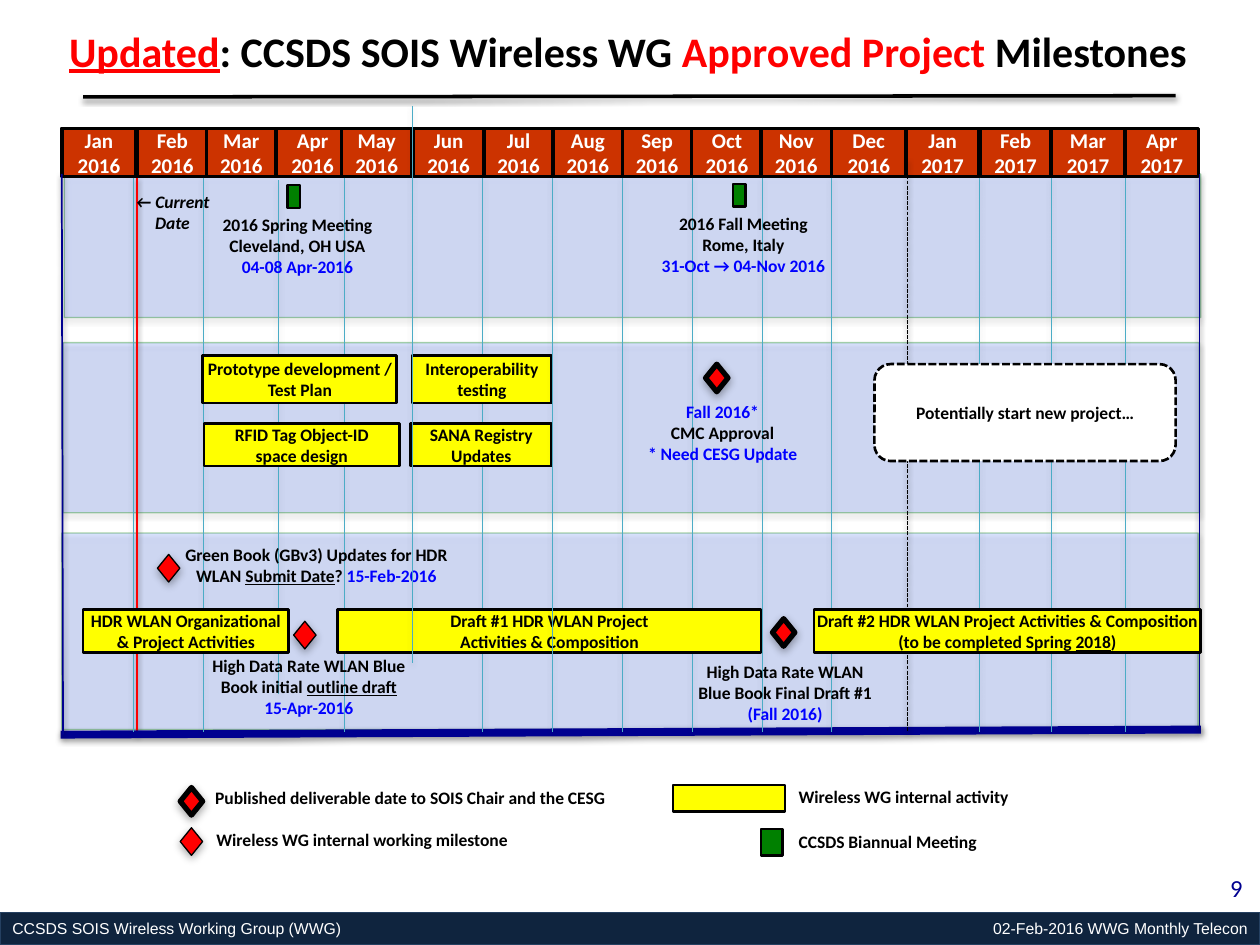
"""Build the wireless project milestone timeline slide."""
from dataclasses import dataclass
from typing import NamedTuple, Optional

from lxml import etree
from pptx import Presentation
from pptx import util as u
from pptx.dml.color import RGBColor
from pptx.enum import dml, shapes, text
from pptx.oxml.ns import qn

RECT = shapes.MSO_SHAPE.RECTANGLE
DIAMOND = shapes.MSO_SHAPE.DIAMOND
ROUND = shapes.MSO_SHAPE.ROUNDED_RECTANGLE
L, C, R = text.PP_ALIGN.LEFT, text.PP_ALIGN.CENTER, text.PP_ALIGN.RIGHT
DOT, DASH = dml.MSO_LINE.ROUND_DOT, dml.MSO_LINE.SQUARE_DOT


@dataclass(frozen=True)
class Theme:
    black: str = "000000"
    white: str = "FFFFFF"
    red: str = "FF0000"
    blue: str = "0000FF"
    navy: str = "000090"
    teal: str = "4BACC6"
    band: str = "3366FF"
    green: str = "008000"
    yellow: str = "FFFF00"
    month: str = "CC3300"
    footer: str = "0F243E"
    footer_edge: str = "254061"
    font: str = "Calibri"
    footer_font: str = "Arial"
    title: float = 24
    number: float = 14
    head: float = 12
    body: float = 10
    small: float = 9


T = Theme()


class Run(NamedTuple):
    text: str
    color: str = T.black
    underline: bool = False
    italic: bool = False
    bold: bool = True
    size: float = T.body
    font: str = T.font


class Shadow(NamedTuple):
    alpha: int
    blur: float
    dist: float


class Box(NamedTuple):
    x: float
    y: float
    w: float
    h: float


class Line(NamedTuple):
    x1: float
    y1: float
    x2: float
    y2: float
    color: str
    width: float
    dash: Optional[dml.MSO_LINE] = None


class Label(NamedTuple):
    box: Box
    paras: list
    align: text.PP_ALIGN = C
    wrap: bool = True


class Activity(NamedTuple):
    box: Box
    paras: list


BAND_SHADOW, LINE_SHADOW, GEM_SHADOW = Shadow(35, 3.1, 1.8), Shadow(38, 3.1, 1.6), Shadow(35, 5, 1.8)


def add_shadow(sp, shadow: Shadow) -> None:
    """Give a shape or connector a soft shadow straight below it."""
    spPr = sp._element.spPr
    effects = spPr.find(qn("a:effectLst"))
    if effects is None:
        effects = etree.SubElement(spPr, qn("a:effectLst"))
    outer = etree.SubElement(effects, qn("a:outerShdw"), blurRad=str(int(u.Pt(shadow.blur))),
                             dist=str(int(u.Pt(shadow.dist))), dir="5400000", rotWithShape="0")
    clr = etree.SubElement(outer, qn("a:srgbClr"), val=T.black)
    etree.SubElement(clr, qn("a:alpha"), val=str(shadow.alpha * 1000))


def write(tf, paras: list, align: text.PP_ALIGN, wrap: bool = True) -> None:
    """Fill a text frame; each paragraph is a string, a run or a list of runs."""
    tf.word_wrap = wrap
    for i, para in enumerate(paras):
        p = tf.paragraphs[0] if i == 0 else tf.add_paragraph()
        p.alignment = align
        for item in para if isinstance(para, list) else [para]:
            run = Run(item) if isinstance(item, str) else item
            r = p.add_run()
            r.text = run.text
            fmt = {"name": run.font, "size": u.Pt(run.size), "bold": run.bold,
                   "italic": run.italic, "underline": run.underline}
            for key, value in fmt.items():
                setattr(r.font, key, value)
            r.font.color.rgb = RGBColor.from_string(run.color)


def add_box(s, kind, box: Box, fill: str, width: float, edge: str = T.black, paras: list = (),
            align: text.PP_ALIGN = C, shadow: Optional[Shadow] = None):
    """Draw a filled preset shape with optional text and shadow."""
    sp = s.shapes.add_shape(kind, *map(u.Pt, box))
    sp.shadow.inherit = False
    sp.fill.solid()
    sp.fill.fore_color.rgb = RGBColor.from_string(fill)
    sp.line.color.rgb = RGBColor.from_string(edge)
    sp.line.width = u.Pt(width)
    sp.text_frame.vertical_anchor = text.MSO_ANCHOR.MIDDLE
    write(sp.text_frame, paras, align, wrap=False)
    if shadow:
        add_shadow(sp, shadow)
    return sp


def add_band(s, box: Box) -> None:
    """Draw a translucent timeline band."""
    sp = add_box(s, RECT, box, T.band, 0.75, T.green)
    for clr, alpha in zip(list(sp._element.spPr.iter(qn("a:srgbClr"))), (18, 33)):
        etree.SubElement(clr, qn("a:alpha"), val=str(alpha * 1000))
    add_shadow(sp, BAND_SHADOW)


def add_line(s, ln: Line) -> None:
    """Draw a straight shadowed line."""
    cn = s.shapes.add_connector(shapes.MSO_CONNECTOR.STRAIGHT, *map(u.Pt, ln[:4]))
    cn.line.color.rgb = RGBColor.from_string(ln.color)
    cn.line.width = u.Pt(ln.width)
    if ln.dash:
        cn.line.dash_style = ln.dash
    add_shadow(cn, LINE_SHADOW)


def add_label(s, label: Label) -> None:
    """Draw a text box."""
    sp = s.shapes.add_textbox(*map(u.Pt, label.box))
    write(sp.text_frame, label.paras, label.align, label.wrap)


def grid(x: float, top: float = 101.5, bottom: float = 418) -> Line:
    """Return a dotted month line."""
    return Line(x, top, x, bottom, T.teal, 0.25, DOT)


MONTHS = [("Jan", 35.3, 42.5), ("Feb", 78.5, 40), ("Mar", 118.1, 39.6), ("Apr", 157.7, 41.8),
          ("May", 195.1, 40.3), ("Jun", 236.2, 40.3), ("Jul", 276.5, 39.6), ("Aug", 316.1, 39.6),
          ("Sep", 355.7, 39.6), ("Oct", 395.3, 40.3), ("Nov", 434.9, 40.3), ("Dec", 475.2, 42.5),
          ("Jan", 517.7, 41.8), ("Feb", 560.2, 40.3), ("Mar", 600.5, 42.5), ("Apr", 643, 41.8)]
BANDS = [Box(36.7, 99.4, 649.4, 82.1), Box(36, 195.8, 649.4, 97.2), Box(35.3, 304.6, 649.4, 112.3)]
FRAME = [Line(78.5, 101, 78.5, 420, T.red, 1), Line(34.6, 419.8, 686.2, 416.9, T.navy, 4.5)]
GRID = [*map(grid, (76, 115.9, 196.6, 275.8, 355.7, 395.3, 435.6, 475.2, 559.8, 600.5, 643)),
        grid(159.1, 103, 396), Line(518.4, 91.4, 518.4, 417.6, T.black, 0.75, DASH),
        Line(47.5, 55.4, 671.8, 54.7, T.black, 2),
        Line(35.3, 99.4, 36, 419.8, T.navy, 1), Line(685.4, 99.4, 685.4, 416.2, T.navy, 1)]
FRONT_GRID = [grid(235.4, 60.5, 378.7), grid(315.4)]
LABELS = [
    Label(Box(32.4, 10.8, 656.6, 36), [[
        Run("Updated", T.red, True, size=T.title), Run(": CCSDS SOIS Wireless WG ", size=T.title),
        Run("Approved Project ", T.red, size=T.title), Run("Milestones", size=T.title)]], L, False),
    Label(Box(69.8, 105.8, 57.6, 31.7), [Run("← Current", italic=True), Run("Date", italic=True)]),
    Label(Box(118.8, 118.8, 102.2, 43.9),
          ["2016 Spring Meeting", "Cleveland, OH USA", Run("04-08 Apr-2016", T.blue)]),
    Label(Box(368.6, 118.1, 112.3, 43.9),
          ["2016 Fall Meeting", "Rome, Italy", Run("31-Oct → 04-Nov 2016", T.blue)]),
    Label(Box(350.6, 225.4, 124.6, 43.9),
          [Run("Fall 2016*", T.blue), "CMC Approval", Run("* Need CESG Update", T.blue)]),
    Label(Box(91.4, 307.4, 178.6, 31.7),
          [["Green Book (GBv3) Updates for HDR WLAN ", Run("Submit Date", underline=True), "? ",
            Run("15-Feb-2016", T.blue)]]),
    Label(Box(105.1, 370.8, 142.6, 43.9),
          [["High Data Rate WLAN Blue Book initial ", Run("outline draft", underline=True)],
           Run("15-Apr-2016", T.blue)]),
    Label(Box(387.4, 374.4, 122.4, 43.9),
          ["High Data Rate WLAN", "Blue Book Final Draft #1", Run("(Fall 2016)", T.blue)]),
    Label(Box(115.9, 446.4, 270.7, 19.4), ["Published deliverable date to SOIS Chair and the CESG"], L),
    Label(Box(116.6, 470.2, 190.8, 19.4), ["Wireless WG internal working milestone"], L),
    Label(Box(449.3, 445.7, 136.1, 19.4), ["Wireless WG internal activity"], L),
    Label(Box(449.3, 471.6, 136.1, 19.4), ["CCSDS Biannual Meeting"], L),
    Label(Box(669.6, 495.4, 47.5, 25.2), [Run("9", T.navy, bold=False, size=T.number)], R),
]
ACTIVITIES = [
    Activity(Box(115.9, 203, 110.9, 27.4), ["Prototype development /", "Test Plan"]),
    Activity(Box(235.4, 203, 79.9, 27.4), ["Interoperability", "testing"]),
    Activity(Box(116.6, 241.9, 111.6, 24.5), ["RFID Tag Object-ID", "space design"]),
    Activity(Box(234.7, 241.9, 80.6, 24.5), ["SANA Registry", "Updates"]),
    Activity(Box(47.5, 348.5, 117.4, 24.5), ["HDR WLAN Organizational", "& Project Activities"]),
    Activity(Box(193, 348.5, 241.9, 24.5), ["Draft #1 HDR WLAN Project", "Activities & Composition"]),
    Activity(Box(465.1, 348.5, 221, 24.5),
             ["Draft #2 HDR WLAN Project Activities & Composition",
              ["(to be completed Spring ", Run("2018", underline=True), ")"]]),
    Activity(Box(384.5, 448.6, 64.1, 15.1), []),
]
MEETINGS = [Box(164.2, 105.8, 7.2, 13), Box(419, 105.1, 7.2, 13), Box(434.9, 473.8, 12.2, 15.1)]
WORKING = [(167.8, 355), (90, 316.8), (103, 473)]
PUBLISHED = [(103, 450), (403.2, 208.1), (441.4, 353.5)]


def main() -> None:
    """Draw the slide and save it."""
    prs = Presentation()
    prs.slide_width, prs.slide_height = u.Pt(720), u.Pt(540)
    s = prs.slides.add_slide(prs.slide_layouts[6])
    small = {"color": T.white, "bold": False, "size": T.small, "font": T.footer_font}
    bar = Box(0, 521.3, 720, 18.7)
    add_box(s, RECT, bar, T.footer, 0.75, T.footer_edge,
            [Run("CCSDS SOIS Wireless Working Group (WWG)", **small)], L).text_frame.word_wrap = True
    add_label(s, Label(bar, [Run("02-Feb-2016 WWG Monthly Telecon", **small)], R))
    for box in BANDS:
        add_band(s, box)
    for ln in FRAME:
        add_line(s, ln)
    for i, (name, x, w) in enumerate(MONTHS):
        paras = [Run(t, T.white, size=T.head) for t in (name, str(2016 + i // 12))]
        add_box(s, RECT, Box(x, 73.4, w, 27.4), T.month, 2, paras=paras)
    for ln in GRID:
        add_line(s, ln)
    for label in LABELS:
        add_label(s, label)
    for box in MEETINGS:
        add_box(s, RECT, box, T.green, 1.5)
    for places, width in ((WORKING, 0.75), (PUBLISHED, 3)):
        for x, y in places:
            add_box(s, DIAMOND, Box(x, y, 12.8, 15.8), T.red, width, shadow=GEM_SHADOW)
    for act in ACTIVITIES:
        add_box(s, RECT, act.box, T.yellow, 1.5, paras=act.paras)
    for ln in FRONT_GRID:
        add_line(s, ln)
    future = add_box(s, ROUND, Box(499.7, 208.1, 172.1, 55.4), T.white, 1.5,
                     paras=["Potentially start new project…"])
    future.line.dash_style = DASH
    prs.save("out.pptx")


if __name__ == "__main__":
    main()
